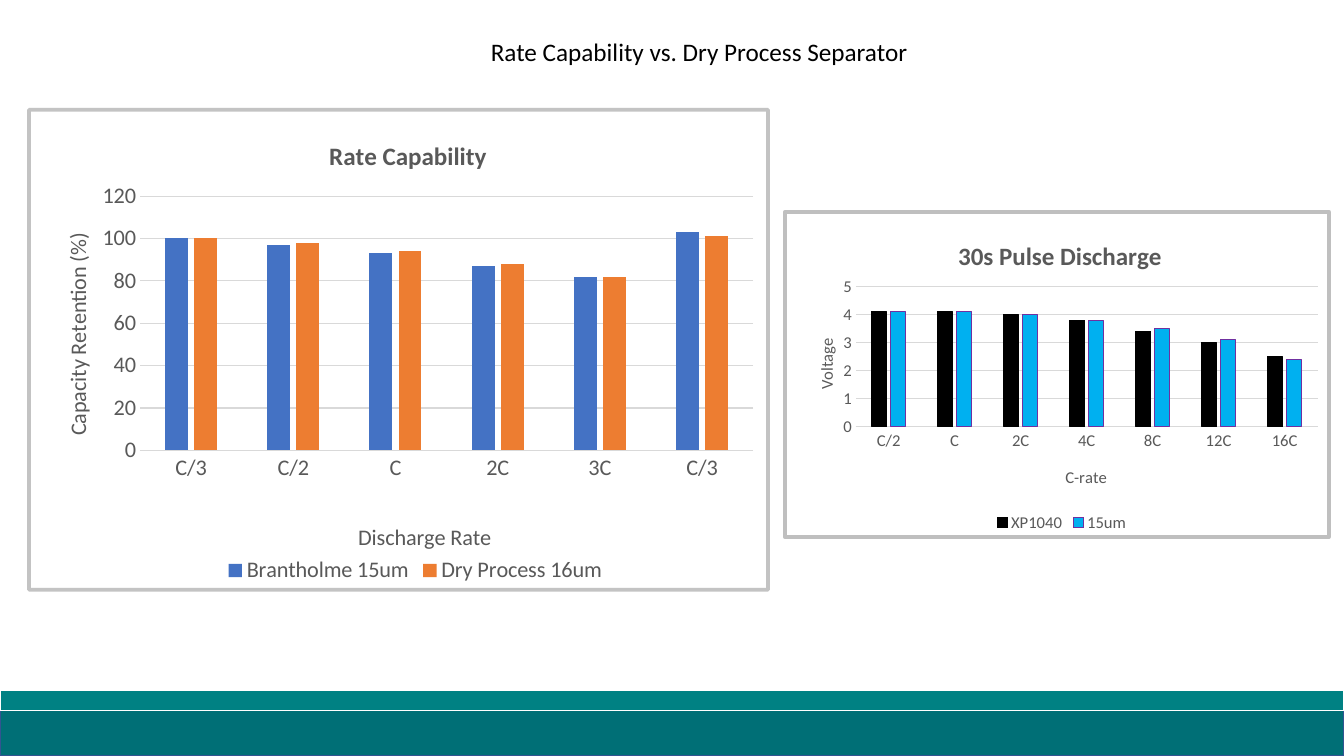
from lxml import etree
from pptx import Presentation
from pptx.chart.data import CategoryChartData
from pptx.dml.color import RGBColor
from pptx.enum.chart import XL_CHART_TYPE, XL_LEGEND_POSITION, XL_TICK_MARK
from pptx.enum.shapes import MSO_SHAPE
from pptx.enum.text import MSO_ANCHOR, PP_ALIGN
from pptx.oxml import parse_xml
from pptx.oxml.ns import qn
from pptx.util import Pt

FACE = "Calibri"
BLACK = RGBColor(0x00, 0x00, 0x00)
WHITE = RGBColor(0xFF, 0xFF, 0xFF)
GRAY = RGBColor(0x59, 0x59, 0x59)
PALE = RGBColor(0xD9, 0xD9, 0xD9)
FRAME = RGBColor(0xBF, 0xBF, 0xBF)
DEEP = RGBColor(0x00, 0x6F, 0x76)
TEAL = RGBColor(0x00, 0x81, 0x83)
NAVY = RGBColor(0x32, 0x54, 0x91)
BLUE = RGBColor(0x44, 0x72, 0xC4)
ORANGE = RGBColor(0xED, 0x7D, 0x31)
SKY = RGBColor(0x00, 0xB0, 0xF0)
PURPLE = RGBColor(0x70, 0x30, 0xA0)


def style(font, size, color=GRAY, bold=False):
    font.name = FACE
    font.size = Pt(size)
    font.bold = bold
    font.color.rgb = color


def write(frame, text, size, color=GRAY, bold=False, align=None, space=None):
    frame.text = text
    para = frame.paragraphs[0]
    para.alignment = align
    para.line_spacing = space
    style(para.runs[0].font, size, color, bold)


def place(part, index, **spots):
    """Fix a chart part by fractions of the chart area (x, y, w, h)."""
    old = part.find(qn("c:layout"))
    if old is not None:
        part.remove(old)
    layout = etree.Element(qn("c:layout"))
    manual = etree.SubElement(layout, qn("c:manualLayout"))
    if part.tag == qn("c:plotArea"):
        etree.SubElement(manual, qn("c:layoutTarget")).set("val", "inner")
    for key in "xy":
        etree.SubElement(manual, qn(f"c:{key}Mode")).set("val", "edge")
    for key, value in spots.items():
        etree.SubElement(manual, qn(f"c:{key}")).set("val", str(value))
    part.insert(index, layout)


def border(chart, fill, alpha):
    paint = f'<a:solidFill><a:srgbClr val="{fill}"/></a:solidFill>' if fill else "<a:noFill/>"
    space = chart.element
    space.find(qn("c:chart")).addnext(parse_xml(
        '<c:spPr xmlns:c="http://schemas.openxmlformats.org/drawingml/2006/chart"'
        ' xmlns:a="http://schemas.openxmlformats.org/drawingml/2006/main">'
        f'{paint}<a:ln w="{Pt(2.75)}"><a:solidFill><a:srgbClr val="{FRAME}">'
        f'<a:alpha val="{alpha * 1000}"/></a:srgbClr></a:solidFill></a:ln></c:spPr>'))


def axes(chart, labels, size, top, step):
    cat, val = chart.category_axis, chart.value_axis
    for axis, label in zip((cat, val), labels):
        axis.major_tick_mark = axis.minor_tick_mark = XL_TICK_MARK.NONE
        style(axis.tick_labels.font, size)
        write(axis.axis_title.text_frame, label, size)
    cat.format.line.color.rgb = PALE
    cat.format.line.width = Pt(0.75)
    val.format.line.fill.background()
    val.minimum_scale, val.maximum_scale, val.major_unit = 0, top, step
    val.tick_labels.number_format = "0"
    val.tick_labels.number_format_is_linked = False
    grid = val.major_gridlines.format.line
    grid.color.rgb = PALE
    grid.width = Pt(0.75)


def bars(slide, box, title, labels, cats, rows, size, top, step, spots, fill=None, alpha=100):
    data = CategoryChartData()
    data.categories = cats
    for name, values, *_ in rows:
        data.add_series(name, values)
    chart = slide.shapes.add_chart(
        XL_CHART_TYPE.COLUMN_CLUSTERED, *map(Pt, box), data).chart
    style(chart.font, size, BLACK)
    write(chart.chart_title.text_frame, title, 18, bold=True)
    axes(chart, labels, size, top, step)

    # Columns
    plot = chart.plots[0]
    plot.gap_width, plot.overlap = 219, -27
    plot.vary_by_categories = False
    for series, (_, _, color, edge) in zip(plot.series, rows):
        series.format.fill.solid()
        series.format.fill.fore_color.rgb = color
        if edge is not None:
            series.format.line.color.rgb = edge
            series.format.line.width = Pt(0.75)

    # Legend, frame and inner places
    chart.has_legend = True
    chart.legend.position = XL_LEGEND_POSITION.BOTTOM
    chart.legend.include_in_layout = False
    style(chart.legend.font, size)
    border(chart, fill, alpha)
    area = chart.element.find(qn("c:chart")).find(qn("c:plotArea"))
    x, y, w, h = spots["plot"]
    place(area, 0, x=x, y=y, w=w, h=h)
    parts = {"title": chart.chart_title._element,
             "cat": chart.category_axis.axis_title._element,
             "val": chart.value_axis.axis_title._element,
             "legend": chart.legend._element}
    for name, part in parts.items():
        x, y = spots[name]
        place(part, 1, x=x, y=y)


def footer(slide, box):
    left, top, width, height = box
    thin = 14.4
    bands = [(top + thin, height - thin, DEEP, NAVY), (top, thin, TEAL, WHITE)]
    for y, tall, color, edge in bands:
        band = slide.shapes.add_shape(
            MSO_SHAPE.RECTANGLE, Pt(left), Pt(y), Pt(width), Pt(tall))
        band.shadow.inherit = False
        band.fill.solid()
        band.fill.fore_color.rgb = color
        band.line.color.rgb = edge
        band.line.width = Pt(1)


def heading(slide, box, text):
    title = slide.shapes.title
    title.left, title.top, title.width, title.height = map(Pt, box)
    frame = title.text_frame
    frame.word_wrap = True
    frame.vertical_anchor = MSO_ANCHOR.MIDDLE
    write(frame, text, 18, BLACK, align=PP_ALIGN.LEFT, space=0.9)


def main():
    deck = Presentation()
    deck.slide_width, deck.slide_height = Pt(960), Pt(540)
    slide = deck.slides.add_slide(deck.slide_layouts[5])
    footer(slide, (0, 493.2, 960, 46.8))
    heading(slide, (343.4, 0, 347.8, 75.6), "Rate Capability vs. Dry Process Separator")

    # Left chart: capacity kept at each rate
    bars(slide, (19.4, 77, 530.6, 345.6), "Rate Capability",
         ("Discharge Rate", "Capacity Retention (%)"),
         ("C/3", "C/2", "C", "2C", "3C", "C/3"),
         [("Brantholme 15um", (100, 97, 93, 87, 82, 103), BLUE, None),
          ("Dry Process 16um", (100, 98, 94, 88, 82, 101), ORANGE, None)],
         16, 120, 20,
         {"plot": (0.15, 0.18, 0.83, 0.53), "title": (0.4, 0.05),
          "cat": (0.44, 0.85), "val": (0.04, 0.25), "legend": (0.26, 0.93)},
         fill=WHITE, alpha=92)

    # Right chart: voltage under pulse
    bars(slide, (559.4, 149.8, 391, 235.4), "30s Pulse Discharge",
         ("C-rate", "Voltage"),
         ("C/2", "C", "2C", "4C", "8C", "12C", "16C"),
         [("XP1040", (4.1, 4.1, 4, 3.8, 3.4, 3, 2.5), BLACK, BLACK),
          ("15um", (4.1, 4.1, 4, 3.8, 3.5, 3.1, 2.4), SKY, PURPLE)],
         12, 5, 1,
         {"plot": (0.13, 0.23, 0.85, 0.43), "title": (0.31, 0.07),
          "cat": (0.51, 0.77), "val": (0.05, 0.38), "legend": (0.38, 0.92)})
    deck.save("out.pptx")


if __name__ == "__main__":
    main()
